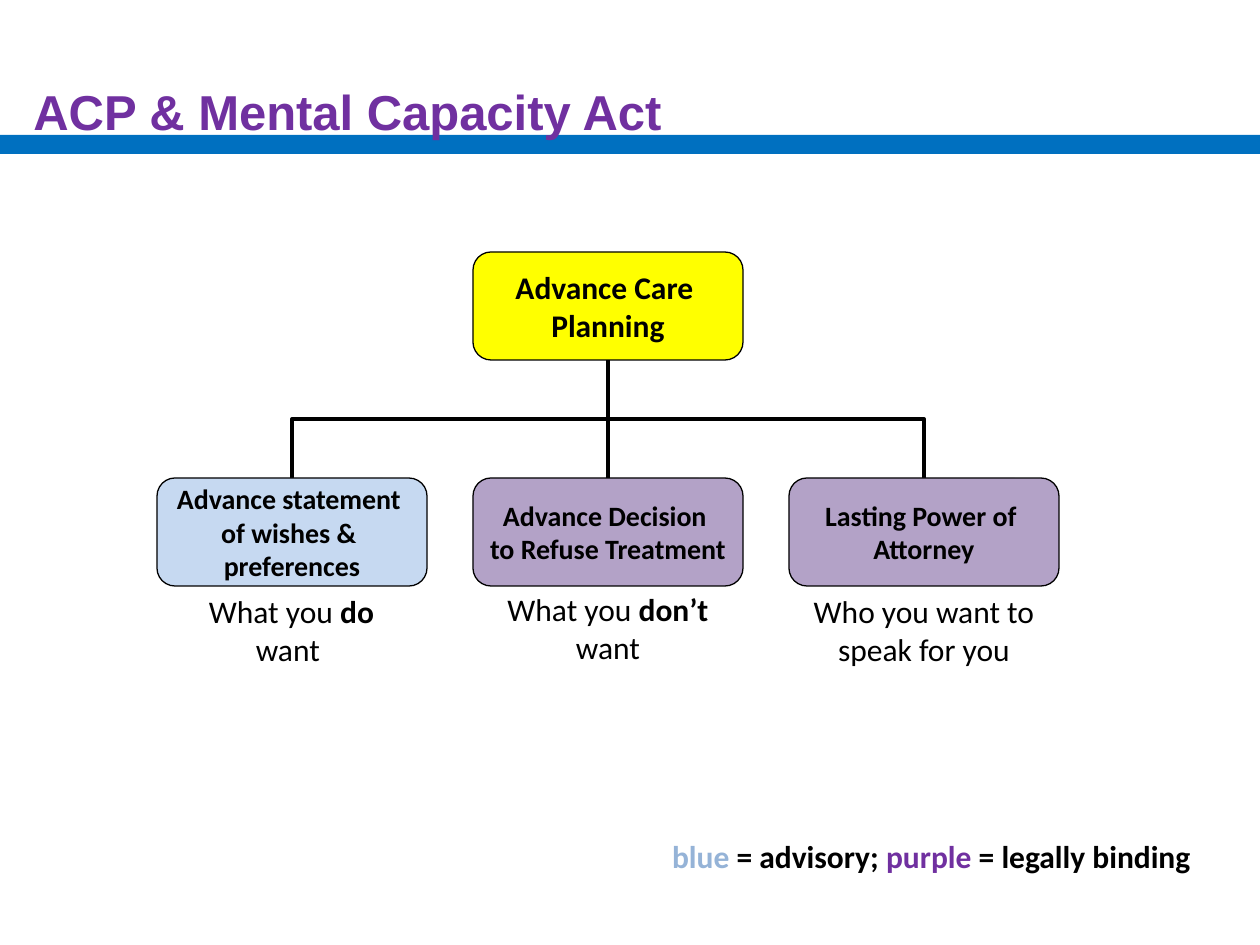
"""Builds the slide that sets out advance care planning under the Mental Capacity Act."""
import dataclasses

import lxml.etree
import pptx
import pptx.dml.color
import pptx.enum.shapes
import pptx.enum.text
import pptx.oxml.ns
import pptx.util

SHAPE = pptx.enum.shapes.MSO_SHAPE
LINK = pptx.enum.shapes.MSO_CONNECTOR
ALIGN = pptx.enum.text.PP_ALIGN
ANCHOR = pptx.enum.text.MSO_ANCHOR


@dataclasses.dataclass(frozen=True)
class Theme:
    black: str = "000000"
    purple: str = "7030A0"
    bar: str = "0070C0"
    root: str = "FFFF00"
    advisory: str = "C6D9F1"
    binding: str = "B3A2C7"
    pale_blue: str = "95B3D7"
    heading: str = "Arial"
    body: str = "Calibri"
    title_size: int = 28
    text_size: int = 18
    box_size: int = 16
    outline: float = 0.75
    link: float = 2.25


class Deck:
    def __init__(self, prs, theme):
        self.theme = theme
        self.s = prs.slides.add_slide(prs.slide_layouts[6])

    def px(self, n):
        return pptx.util.Emu(round(n * 914400 / 126))

    def rgb(self, value):
        return pptx.dml.color.RGBColor.from_string(value)

    def fill_text(self, tf, paragraphs, align, frame, **font):
        for name, value in frame.items():
            setattr(tf, name, value)
        base = {"name": self.theme.body, "size": self.theme.text_size,
                "bold": False, "color": self.theme.black, **font}
        for i, runs in enumerate(paragraphs):
            p = tf.paragraphs[0] if i == 0 else tf.add_paragraph()
            p.alignment = align
            for text, changes in runs:
                r = p.add_run()
                r.text = text
                fmt = {**base, **changes}
                r.font.color.rgb = self.rgb(fmt.pop("color"))
                fmt["size"] = pptx.util.Pt(fmt["size"])
                for name, value in fmt.items():
                    setattr(r.font, name, value)

    def shape(self, kind, area, fill, outline=None):
        sp = self.s.shapes.add_shape(kind, *map(self.px, area))
        sp.shadow.inherit = False
        sp.fill.solid()
        sp.fill.fore_color.rgb = self.rgb(fill)
        if outline:
            sp.line.color.rgb = self.rgb(self.theme.black)
            sp.line.width = pptx.util.Pt(outline)
        else:
            sp.line.fill.background()
        return sp

    def box(self, area, fill, lines, size):
        sp = self.shape(SHAPE.ROUNDED_RECTANGLE, area, fill, self.theme.outline)
        frame = dict.fromkeys(("margin_left", "margin_top", "margin_right", "margin_bottom"), 0)
        frame.update(word_wrap=False, vertical_anchor=ANCHOR.MIDDLE)
        self.fill_text(sp.text_frame, [[(line, {})] for line in lines], ALIGN.CENTER,
                       frame, size=size, bold=True)
        return sp

    def text(self, area, runs, align, anchor=ANCHOR.TOP, **font):
        sp = self.s.shapes.add_textbox(*map(self.px, area))
        self.fill_text(sp.text_frame, [runs], align,
                       {"word_wrap": True, "vertical_anchor": anchor}, **font)

    def connector(self, kind, start, end):
        c = self.s.shapes.add_connector(kind, *map(self.px, (*start, *end)))
        c.line.color.rgb = self.rgb(self.theme.black)
        c.line.width = pptx.util.Pt(self.theme.link)
        lxml.etree.SubElement(c._element.spPr, pptx.oxml.ns.qn("a:effectLst"))
        return c

    def straight(self, child, parent):
        c = self.connector(LINK.STRAIGHT, (0, 0), (0, 0))
        c.begin_connect(child, 0)
        c.end_connect(parent, 2)

    def elbow(self, start, end):
        """Turns a sideways elbow a quarter so that it leaves and arrives vertically."""
        (x1, y1), (x2, y2) = start, end
        cx, cy = (x1 + x2) / 2, (y1 + y2) / 2
        half_w, half_h = abs(x1 - x2) / 2, (y1 - y2) / 2
        side, turn = (-1, 270) if x1 > x2 else (1, 90)
        c = self.connector(LINK.ELBOW, (cx + side * half_h, cy + half_w),
                           (cx - side * half_h, cy - half_w))
        c._element.spPr.find(pptx.oxml.ns.qn("a:xfrm")).set("rot", str(turn * 60000))


def main():
    prs = pptx.Presentation()
    prs.slide_width, prs.slide_height = pptx.util.Inches(10), pptx.util.Inches(7.5)
    theme = Theme()
    deck = Deck(prs, theme)
    bold = {"bold": True}

    deck.shape(SHAPE.RECTANGLE, (0, 135, 1260, 19), theme.bar)
    deck.text((21, 32, 1134, 158), [("ACP & Mental Capacity Act", {})], ALIGN.LEFT,
              ANCHOR.MIDDLE, name=theme.heading, size=theme.title_size,
              bold=True, color=theme.purple)

    left, step, width, height = 157, 316, 270, 108
    root_top, child_top = 252, 478
    middle = left + step
    root_foot = (middle + width // 2, root_top + height)
    branches = [
        (theme.advisory, ["Advance statement ", "of wishes & ", "preferences"],
         199, 586, [("What you ", {}), ("do", bold), (" want ", {})]),
        (theme.binding, ["Advance Decision ", "to Refuse Treatment"],
         252, 584, [("What you ", {}), ("don’t", bold), (" want", {})]),
        (theme.binding, ["Lasting Power of ", "Attorney"],
         256, 586, [("Who you want to speak for you", {})]),
    ]
    for i in (0, 2):
        deck.elbow((left + i * step + width // 2, child_top), root_foot)
    root = deck.box((middle, root_top, width, height), theme.root,
                    ["Advance Care ", "Planning"], theme.text_size)
    for i, (fill, lines, note_width, note_top, note) in enumerate(branches):
        x = left + i * step
        child = deck.box((x, child_top, width, height), fill, lines, theme.box_size)
        if x == middle:
            deck.straight(child, root)
        deck.text((x + (width - note_width) // 2, note_top, note_width, 89),
                  note, ALIGN.CENTER)

    deck.text((646, 831, 557, 89),
              [("blue", {"color": theme.pale_blue}), (" = advisory; ", {}),
               ("purple ", {"color": theme.purple}), ("= legally binding", {})],
              ALIGN.RIGHT, bold=True)
    prs.save("out.pptx")


if __name__ == "__main__":
    main()
